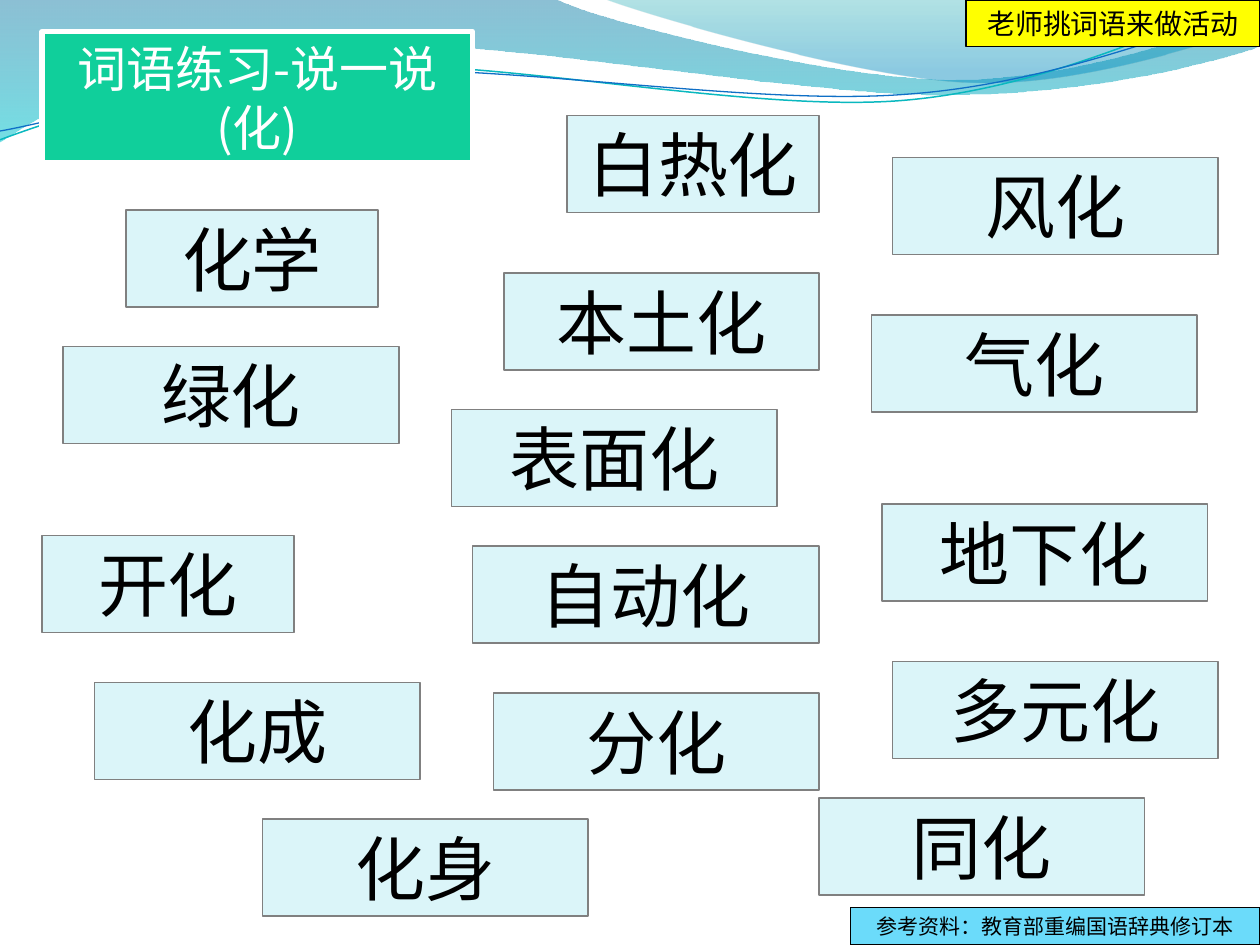
import math

from lxml import etree
from pptx import Presentation
from pptx.dml.color import RGBColor
from pptx.enum.shapes import MSO_SHAPE
from pptx.enum.text import MSO_ANCHOR, MSO_AUTO_SIZE, PP_ALIGN
from pptx.oxml.ns import qn
from pptx.util import Inches, Pt

RECT = MSO_SHAPE.RECTANGLE
CENTER = PP_ALIGN.CENTER
MIDDLE = MSO_ANCHOR.MIDDLE
GROW = MSO_AUTO_SIZE.SHAPE_TO_FIT_TEXT
NO_FIT = MSO_AUTO_SIZE.NONE
FONT = "Noto Sans CJK SC"
GRID = 1 / 12  # inches per grid unit
CARD_HEIGHT = 0.77
LINE_TILT = -2.7

# Each wave is a start point followed by lines (one point) or Bezier curves (three points).
BROAD_WAVE = [
    [(0, 0)], [(4.4, -0.01)],
    [(4.76, 0.17), (6.64, 0.63), (7.58, 0.63)],
    [(8.53, 0.63), (9.58, 0.26), (10, 0.09)],
    [(10.01, 0.36)],
    [(9.83, 0.44), (8.7, 0.76), (7.46, 0.75)],
    [(6.22, 0.75), (3.82, 0.28), (2.57, 0.34)],
    [(1.29, 0.36), (0.46, 0.83), (-0.01, 1.13)],
    [(0, 0)],
]
RIGHT_WAVE = [
    [(4.79, -0.01)],
    [(5.09, 0.11), (6.82, 0.62), (7.69, 0.65)],
    [(8.56, 0.69), (9.61, 0.32), (10, 0.21)],
    [(10, 0)], [(4.79, -0.01)],
]
TEAL_LINE = [
    [(0, 1.11)],
    [(0.48, 0.93), (1.58, 0.57), (2.77, 0.52)],
    [(3.95, 0.47), (5.93, 0.89), (7.13, 0.8)],
    [(8.33, 0.71), (9.38, 0.15), (9.98, -0.02)],
]
BLUE_LINE = [
    [(0, 1.04)],
    [(0.47, 0.96), (1.64, 0.61), (2.83, 0.56)],
    [(4.03, 0.51), (5.97, 0.84), (7.17, 0.75)],
    [(8.36, 0.67), (9.41, 0.21), (10, 0.06)],
]

# word, then left, top and width in grid units
WORDS = [
    ("本土化", 48, 26, 30), ("开化", 4, 51, 24), ("化学", 12, 20, 24),
    ("绿化", 6, 33, 32), ("自动化", 45, 52, 33), ("化成", 9, 65, 31),
    ("同化", 78, 76, 31), ("化身", 25, 78, 31), ("白热化", 54, 11, 24),
    ("风化", 85, 15, 31), ("分化", 47, 66, 31), ("表面化", 43, 39, 31),
    ("地下化", 84, 48, 31), ("气化", 83, 30, 31), ("多元化", 85, 63, 31),
]


def rgb(value):
    return RGBColor.from_string(value)


def to_box(point, box, tilt):
    """Turn a slide point into EMU within a box that is tilted about its centre."""
    left, top, width, height = box
    angle = math.radians(-tilt)
    dx, dy = point[0] - left - width / 2, point[1] - top - height / 2
    x = dx * math.cos(angle) - dy * math.sin(angle) + width / 2
    y = dx * math.sin(angle) + dy * math.cos(angle) + height / 2
    return Inches(x), Inches(y)


def add_outline(s, box, segments, close=False, tilt=0):
    left, top, width, height = map(Inches, box)
    builder = s.shapes.build_freeform(0, 0)
    builder.add_line_segments([(width, height)], close=False)
    sp = builder.convert_to_shape(left, top)
    sp.shadow.inherit = False
    sp.rotation = tilt % 360
    curve = next(sp.element.iter(qn("a:path")))
    for child in list(curve):
        curve.remove(child)
    for i, seg in enumerate(segments):
        tag = "a:moveTo" if i == 0 else "a:lnTo" if len(seg) == 1 else "a:cubicBezTo"
        step = etree.SubElement(curve, qn(tag))
        for point in seg:
            x, y = to_box(point, box, tilt)
            etree.SubElement(step, qn("a:pt"), x=str(x), y=str(y))
    if close:
        etree.SubElement(curve, qn("a:close"))
    return sp


def add_wave(s, box, segments, stops):
    """Add a closed wave; stops are (position, colour, opacity in percent) from the top down."""
    sp = add_outline(s, box, segments, close=True)
    sp.line.fill.background()
    sp.fill.gradient()
    sp.fill.gradient_angle = 270
    for stop, (position, color, _) in zip(sp.fill.gradient_stops, stops):
        stop.position = position
        stop.color.rgb = rgb(color)
    for clr, (_, _, opacity) in zip(sp.element.iter(qn("a:srgbClr")), stops):
        etree.SubElement(clr, qn("a:alpha"), val=str(opacity * 1000))


def add_wave_line(s, box, segments, color, width):
    sp = add_outline(s, box, segments, tilt=LINE_TILT)
    sp.fill.background()
    sp.line.color.rgb = rgb(color)
    sp.line.width = Pt(width)


def add_waves(s):
    add_wave(s, (-0.01, -0.01, 10.02, 1.14), BROAD_WAVE,
             [(0, "0074A1", 45), (1, "00C6CF", 55)])
    add_wave(s, (4.79, -0.01, 5.21, 0.7), RIGHT_WAVE,
             [(0, "00A1A9", 30), (0.8, "008BBF", 45)])
    add_wave_line(s, (-0.02, 0.22, 10.02, 0.71), TEAL_LINE, "0AB8BF", 0.85)
    add_wave_line(s, (-0.02, 0.3, 10.03, 0.58), BLUE_LINE, "0F6FC6", 0.75)


def format_box(sp, text, size, fill, line, width=0.75, color="000000", fit=GROW):
    sp.fill.solid()
    sp.fill.fore_color.rgb = rgb(fill)
    sp.line.color.rgb = rgb(line)
    sp.line.width = Pt(width)
    tf = sp.text_frame
    tf.word_wrap = True
    tf.auto_size = fit
    tf.vertical_anchor = MIDDLE
    p = tf.paragraphs[0]
    p.alignment = CENTER
    r = p.add_run()
    r.text = text
    r.font.size = Pt(size)
    r.font.name = FONT
    r.font.color.rgb = rgb(color)
    ea = etree.Element(qn("a:ea"), typeface=FONT)
    r.font._element.find(qn("a:latin")).addnext(ea)


def add_box(s, box, text, size, fill, line):
    sp = s.shapes.add_shape(RECT, *map(Inches, box))
    sp.shadow.inherit = False
    format_box(sp, text, size, fill, line)


def place_title(s, box, text):
    sp = s.shapes.title
    sp.left, sp.top, sp.width, sp.height = map(Inches, box)
    format_box(sp, text, 28, "10CF9B", "FFFFFF", 3, "FFFFFF", NO_FIT)
    # Bring the title in front of the waves.
    sp.element.getparent().append(sp.element)


def add_word_cards(s):
    for word, *place in WORDS:
        left, top, width = (n * GRID for n in place)
        add_box(s, (left, top, width, CARD_HEIGHT), word, 40, "DBF5F9", "808080")


def main():
    prs = Presentation()
    prs.slide_width, prs.slide_height = Inches(10), Inches(7.5)
    s = prs.slides.add_slide(prs.slide_layouts[5])
    add_waves(s)
    place_title(s, (4 * GRID, 3 * GRID, 41 * GRID, 1.04), "词语练习-说一说(化)")
    add_word_cards(s)
    add_box(s, (6.75, 7.2, 3.25, 0.3), "参考资料：教育部重编国语辞典修订本",
            12, "6BDBFA", "000000")
    add_box(s, (92 * GRID, 0, 28 * GRID, 0.37), "老师挑词语来做活动", 16, "FFFF00", "000000")
    prs.save("out.pptx")


if __name__ == "__main__":
    main()
